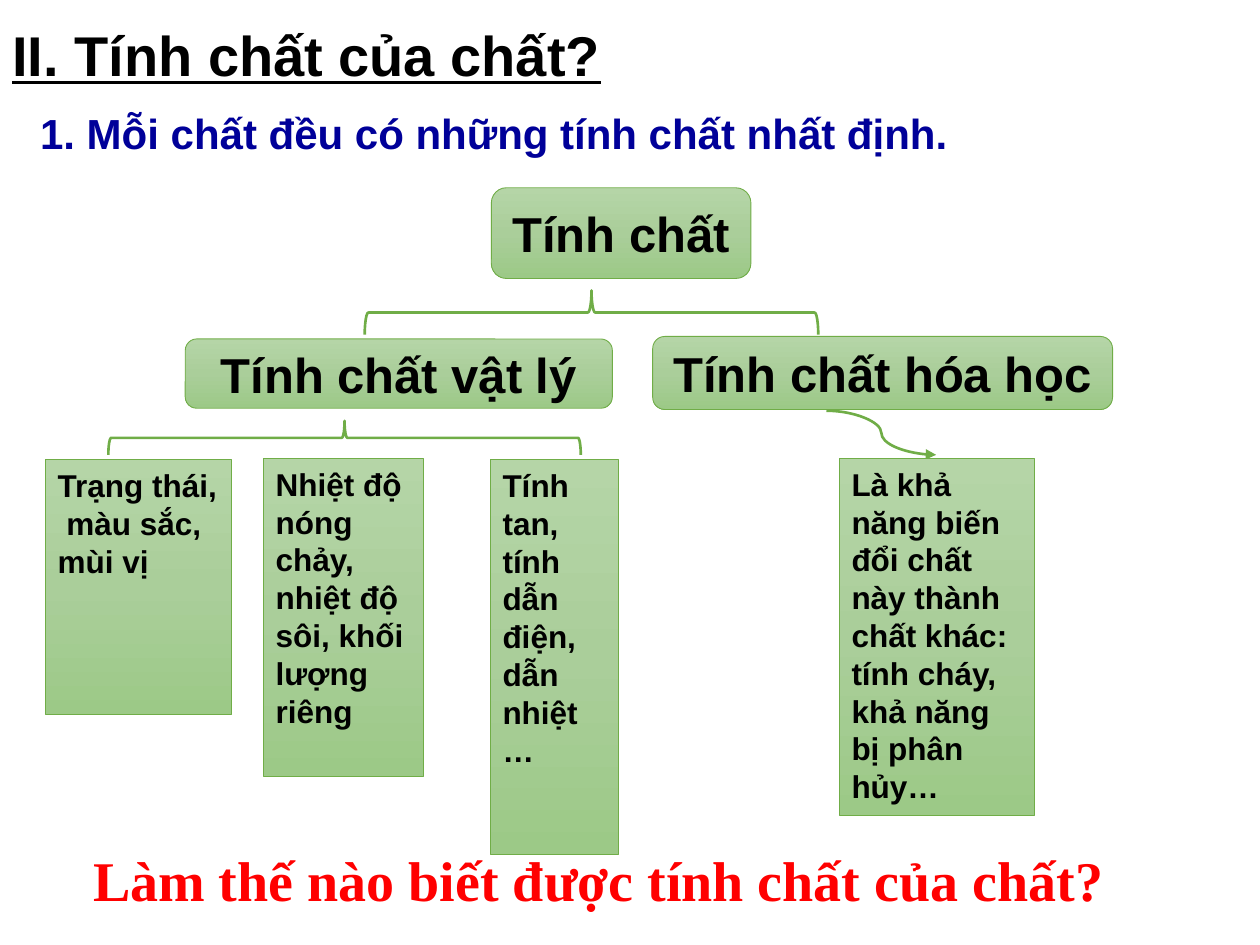
from copy import deepcopy
from dataclasses import dataclass

from lxml.etree import SubElement
from pptx import Presentation
from pptx.dml.color import RGBColor
from pptx.enum.shapes import MSO_CONNECTOR, MSO_SHAPE
from pptx.enum.text import MSO_ANCHOR, PP_ALIGN
from pptx.oxml.ns import qn
from pptx.util import Inches, Pt


@dataclass(frozen=True)
class Theme:
    gradient: tuple = ((0, "B5D5A7"), (0.5, "AACE9A"), (1, "9CC987"))
    green: str = "70AD47"
    black: str = "000000"
    navy: str = "000099"
    red: str = "FF0000"
    sans: str = "Arial"
    serif: str = "Times New Roman"
    heading: int = 32
    branch: int = 28
    subheading: int = 24
    detail: int = 18
    border: float = 0.5
    link: float = 1.5


@dataclass(frozen=True)
class Box:
    left: float
    top: float
    width: float
    height: float
    text: str = ""
    wrap: bool = True

    def frame(self) -> tuple:
        return tuple(map(Inches, (self.left, self.top, self.width, self.height)))


THEME = Theme()

HEADING = Box(0, 0, 8.62, 1.45, "II. Tính chất của chất?")
STATEMENT = Box(-0.39, 0.85, 8.62, 0.12,
                "1. Mỗi chất đều có những tính chất nhất định.")
QUESTION = Box(0.64, 6.66, 8.3, 0.64,
               "Làm thế nào biết được tính chất của chất?", wrap=False)

BRANCHES = (
    Box(3.9, 1.49, 2.06, 0.72, "Tính chất"),
    Box(1.47, 2.69, 3.39, 0.55, "Tính chất vật lý"),
    Box(5.18, 2.67, 3.65, 0.58, "Tính chất hóa học"),
)
DETAILS = (
    Box(0.36, 3.65, 1.48, 2.02, "Trạng thái,\n màu sắc,\nmùi vị", wrap=False),
    Box(2.09, 3.64, 1.27, 2.52,
        "Nhiệt độ nóng chảy, nhiệt độ sôi, khối lượng riêng"),
    Box(3.89, 3.65, 1.02, 3.13, "Tính tan, tính dẫn điện, dẫn nhiệt…"),
    Box(6.66, 3.64, 1.55, 2.83,
        "Là khả năng biến đổi chất này thành chất khác: "
        "tính cháy, khả năng bị phân hủy…"),
)
# Braces are placed before their quarter turn
BRACES = (Box(4.52, 0.68, 0.35, 3.6), Box(2.6, 1.6, 0.27, 3.75))


def write(shape, text: str, *, size: int, color: str = THEME.black,
          font: str = THEME.sans, align=PP_ALIGN.LEFT, anchor=MSO_ANCHOR.TOP,
          wrap: bool = True, underline: bool = False, spacing: float = 1,
          margin_top: float = 0.05) -> None:
    frame = shape.text_frame
    frame.word_wrap = wrap
    frame.vertical_anchor = anchor
    frame.margin_top = Inches(margin_top)
    frame.text = text
    for paragraph in frame.paragraphs:
        paragraph.alignment = align
        paragraph.line_spacing = spacing
        for run in paragraph.runs:
            run.font.name = font
            run.font.size = Pt(size)
            run.font.bold = True
            run.font.underline = underline
            run.font.color.rgb = RGBColor.from_string(color)


def set_line(shape, width: float) -> None:
    shape.line.color.rgb = RGBColor.from_string(THEME.green)
    shape.line.width = Pt(width)


def add_label(slide, box: Box, **text_format) -> None:
    write(slide.shapes.add_textbox(*box.frame()), box.text,
          wrap=box.wrap, **text_format)


def add_card(slide, box: Box, preset: MSO_SHAPE, **text_format) -> None:
    card = slide.shapes.add_shape(preset, *box.frame())
    card.shadow.inherit = False
    card.fill.gradient()
    card.fill.gradient_angle = 270
    stop_list = card.element.spPr.find(".//" + qn("a:gsLst"))
    stop_list.append(deepcopy(stop_list[-1]))
    for stop, (position, color) in zip(card.fill.gradient_stops, THEME.gradient):
        stop.position = position
        stop.color.rgb = RGBColor.from_string(color)
    set_line(card, THEME.border)
    write(card, box.text, wrap=box.wrap, **text_format)


def add_brace(slide, box: Box) -> None:
    brace = slide.shapes.add_shape(MSO_SHAPE.RIGHT_BRACE, *box.frame())
    brace.shadow.inherit = False
    brace.fill.background()
    set_line(brace, THEME.link)
    brace.rotation = 90
    brace.element.spPr.find(qn("a:xfrm")).set("flipH", "1")


def add_curved_arrow(slide, start: tuple, end: tuple) -> None:
    arrow = slide.shapes.add_connector(
        MSO_CONNECTOR.CURVE, *map(Inches, start + end))
    set_line(arrow, THEME.link)
    properties = arrow.element.spPr
    SubElement(properties.find(qn("a:ln")), qn("a:tailEnd"), type="triangle")
    SubElement(properties, qn("a:effectLst"))


def main() -> None:
    presentation = Presentation()
    presentation.slide_width = Inches(10)
    presentation.slide_height = Inches(7.5)
    slide = presentation.slides.add_slide(presentation.slide_layouts[6])

    # Heading
    add_label(slide, HEADING, size=THEME.heading, underline=True,
              spacing=0.9, margin_top=0.22)

    # Tree of properties
    for branch in BRANCHES:
        add_card(slide, branch, MSO_SHAPE.FLOWCHART_ALTERNATE_PROCESS,
                 size=THEME.branch, align=PP_ALIGN.CENTER,
                 anchor=MSO_ANCHOR.MIDDLE)
    for brace in BRACES:
        add_brace(slide, brace)
    add_curved_arrow(slide, (6.56, 3.26), (7.43, 3.61))
    for detail in DETAILS:
        add_card(slide, detail, MSO_SHAPE.RECTANGLE, size=THEME.detail)

    # Statement and closing question
    add_label(slide, STATEMENT, size=THEME.subheading, color=THEME.navy,
              align=PP_ALIGN.CENTER, spacing=0.9)
    add_label(slide, QUESTION, size=THEME.heading, color=THEME.red,
              font=THEME.serif)

    presentation.save("out.pptx")


if __name__ == "__main__":
    main()
